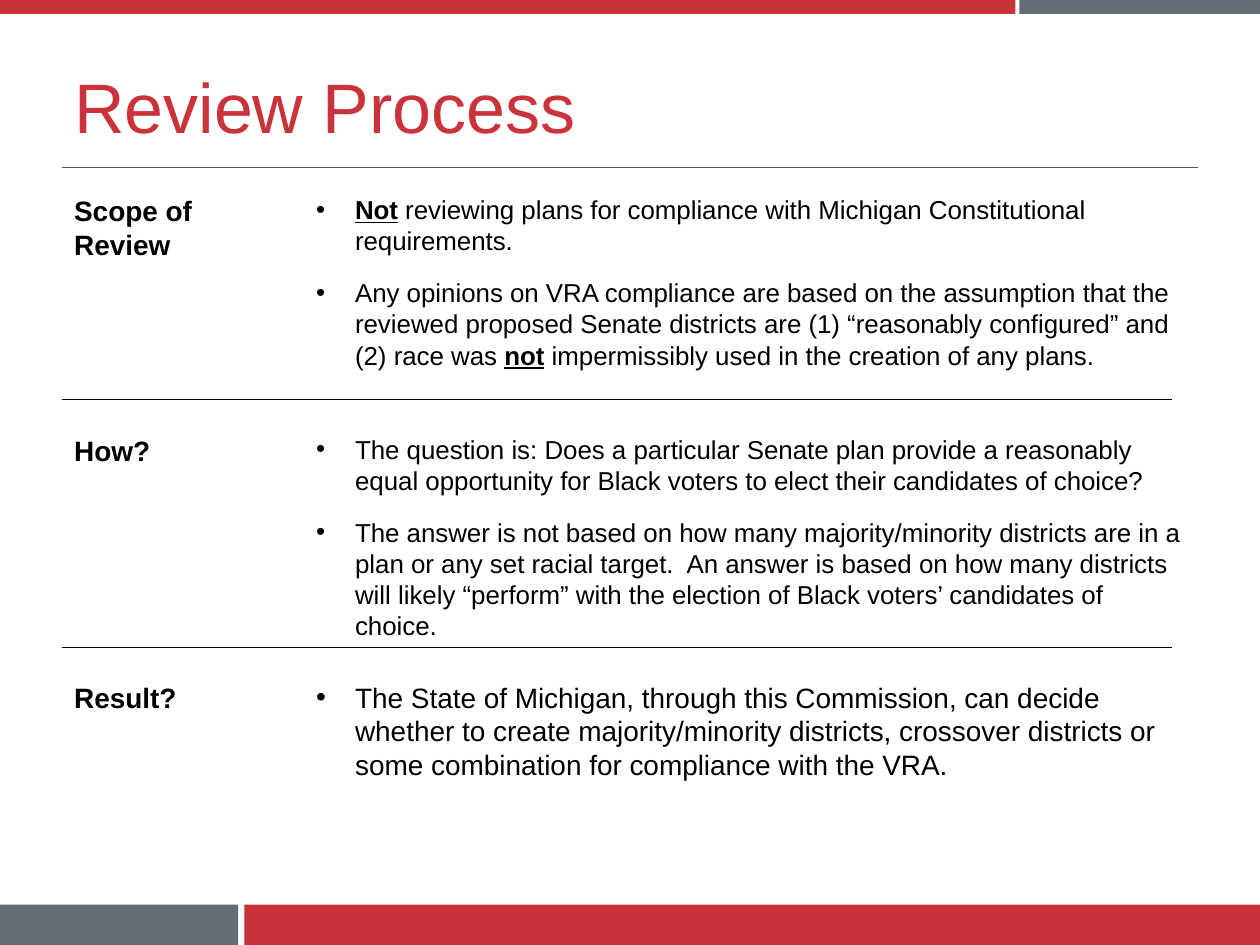
from dataclasses import dataclass

from lxml import etree
from pptx import Presentation
from pptx.dml.color import RGBColor
from pptx.enum.shapes import MSO_CONNECTOR, MSO_SHAPE
from pptx.enum.text import MSO_ANCHOR
from pptx.oxml.ns import qn
from pptx.util import Inches, Pt

RECTANGLE = MSO_SHAPE.RECTANGLE
STRAIGHT = MSO_CONNECTOR.STRAIGHT
TOP, MIDDLE = MSO_ANCHOR.TOP, MSO_ANCHOR.MIDDLE


@dataclass(frozen=True)
class Theme:
    font: str = "Arial"
    red: str = "CB333B"
    slate: str = "646D76"
    gray: str = "54585A"
    black: str = "000000"
    title_size: float = 40
    label_size: float = 16
    body_size: float = 14.8
    gap: float = 12
    rule_width: float = 0.75


THEME = Theme()
LEFT = 0.49
BODY_LEFT = 1.91
STRONG = True

# Each row: top, body height, label, body size, bullets as (text, strong) runs
ROWS = [
    (1.49, 1.58, "Scope of Review", THEME.body_size, [
        [("Not", STRONG),
         (" reviewing plans for compliance with Michigan Constitutional "
          "requirements.", False)],
        [("Any opinions on VRA compliance are based on the assumption that "
          "the reviewed proposed Senate districts are (1) “reasonably "
          "configured” and (2) race was ", False),
         ("not", STRONG),
         (" impermissibly used in the creation of any plans.", False)],
    ]),
    (3.39, 1.54, "How?", THEME.body_size, [
        [("The question is: Does a particular Senate plan provide a "
          "reasonably equal opportunity for Black voters to elect their "
          "candidates of choice?", False)],
        [("The answer is not based on how many majority/minority districts "
          "are in a plan or any set racial target.  An answer is based on "
          "how many districts will likely “perform” with the election of "
          "Black voters’ candidates of choice.", False)],
    ]),
    (5.35, 1.54, "Result?", THEME.label_size, [
        [("The State of Michigan, through this Commission, can decide "
          "whether to create majority/minority districts, crossover "
          "districts or some combination for compliance with the VRA.",
          False)],
    ]),
]


def add_band(page, left, top, width, height, color):
    band = page.shapes.add_shape(
        RECTANGLE, Inches(left), Inches(top), Inches(width), Inches(height))
    band.shadow.inherit = False
    band.fill.solid()
    band.fill.fore_color.rgb = RGBColor.from_string(color)
    band.line.fill.background()


def add_rule(page, right, y, color):
    rule = page.shapes.add_connector(
        STRAIGHT, Inches(LEFT), Inches(y), Inches(right), Inches(y))
    rule.line.color.rgb = RGBColor.from_string(color)
    rule.line.width = Pt(THEME.rule_width)
    etree.SubElement(rule._element.spPr, qn("a:effectLst"))


def add_box(page, left, top, width, height, anchor=TOP):
    box = page.shapes.add_textbox(
        Inches(left), Inches(top), Inches(width), Inches(height))
    box.text_frame.word_wrap = True
    box.text_frame.vertical_anchor = anchor
    return box.text_frame


def add_span(para, text, size, color=THEME.black, bold=False, underline=False):
    span = para.add_run()
    span.text = text
    font = span.font
    font.name, font.size = THEME.font, Pt(size)
    font.bold, font.underline = bold, underline
    font.color.rgb = RGBColor.from_string(color)


def set_bullet(para):
    properties = para._p.get_or_add_pPr()
    properties.set("marL", str(Inches(0.81)))
    properties.set("indent", str(Inches(-0.31)))
    color = etree.SubElement(properties, qn("a:buClr"))
    etree.SubElement(color, qn("a:srgbClr"), val=THEME.black)
    etree.SubElement(properties, qn("a:buFont"), typeface=THEME.font)
    etree.SubElement(properties, qn("a:buChar"), char="•")


def add_bullets(page, top, height, size, bullets):
    frame = add_box(page, BODY_LEFT, top, 7.65, height)
    for index, spans in enumerate(bullets):
        para = frame.add_paragraph() if index else frame.paragraphs[0]
        set_bullet(para)
        para.space_after = Pt(THEME.gap)
        for text, strong in spans:
            add_span(para, text, size, bold=strong, underline=strong)


def add_label(page, top, text):
    para = add_box(page, LEFT, top, BODY_LEFT, 0.75).paragraphs[0]
    para.space_after = Pt(THEME.gap)
    add_span(para, text, THEME.label_size, bold=True)


def main():
    deck = Presentation()
    deck.slide_width, deck.slide_height = Inches(10), Inches(7.5)
    page = deck.slides.add_slide(deck.slide_layouts[6])

    # Bands along the bottom and top edges
    add_band(page, 1.94, 7.18, 8.06, 0.32, THEME.red)
    add_band(page, 0, 7.18, 1.89, 0.32, THEME.slate)
    add_band(page, 0, 0, 8.06, 0.11, THEME.red)
    add_band(page, 8.09, 0, 1.91, 0.11, THEME.slate)

    # Title and its rule
    add_rule(page, 9.51, 1.33, THEME.gray)
    title = add_box(page, LEFT, 0.41, 9.01, 0.86, MIDDLE)
    add_span(title.paragraphs[0], "Review Process", THEME.title_size, THEME.red)

    # Labelled rows
    for top, height, label, size, bullets in ROWS:
        add_label(page, top, label)
        add_bullets(page, top, height, size, bullets)

    # Rules between the rows
    for y in (3.17, 5.14):
        add_rule(page, 9.3, y, THEME.black)

    deck.save("out.pptx")


if __name__ == "__main__":
    main()
